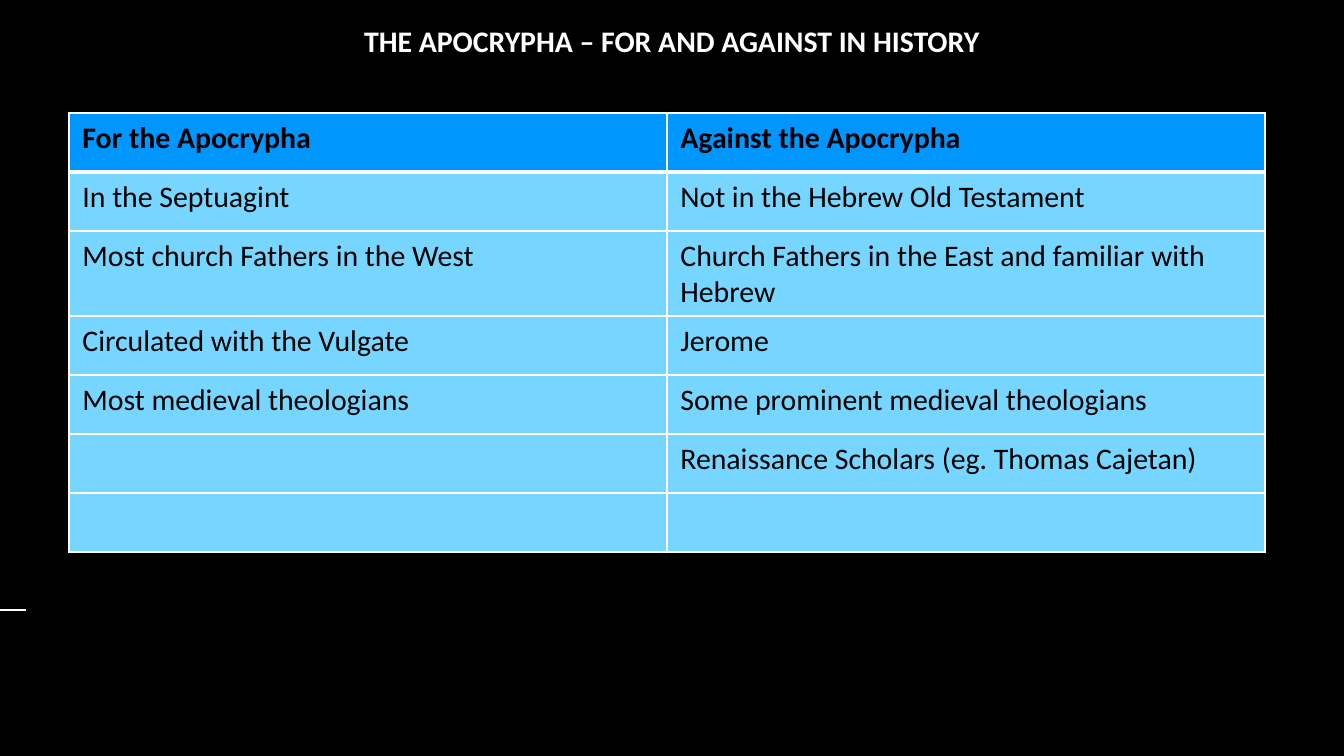
from lxml import etree
from pptx import Presentation
from pptx.dml.color import RGBColor
from pptx.enum.shapes import MSO_CONNECTOR
from pptx.enum.text import PP_ALIGN
from pptx.oxml.ns import qn
from pptx.util import Emu, Pt

STRAIGHT = MSO_CONNECTOR.STRAIGHT
CENTER = PP_ALIGN.CENTER
PX = 914400 / 134.4
WHITE, BLACK = "FFFFFF", "000000"
HEADER_BLUE, BODY_BLUE = "0096FF", "76D6FF"


def px(length):
    return Emu(round(length * PX))


def write(paragraph, text, color, bold):
    run = paragraph.add_run()
    run.text = text
    run.font.color.rgb = RGBColor.from_string(color)
    for key, value in {"name": "Calibri", "size": Pt(16), "bold": bold}.items():
        setattr(run.font, key, value)


prs = Presentation()
prs.slide_width, prs.slide_height = px(1344), px(756)
slide = prs.slides.add_slide(prs.slide_layouts[6])
slide.background.fill.solid()
slide.background.fill.fore_color.rgb = RGBColor.from_string(BLACK)

# Short rule at the left edge
edge_rule = slide.shapes.add_connector(STRAIGHT, px(0), px(610), px(26), px(610))
edge_rule.line.color.rgb = RGBColor.from_string(WHITE)
edge_rule.line.width = Pt(0.75)
etree.SubElement(edge_rule._element.spPr, qn("a:effectLst"))

# Title
title = slide.shapes.add_textbox(px(338), px(16), px(668), px(46)).text_frame
title.word_wrap = True
title.paragraphs[0].alignment = CENTER
write(title.paragraphs[0], "THE APOCRYPHA – FOR AND AGAINST IN HISTORY", WHITE, True)

# Arguments for and against
arguments = [
    ("For the Apocrypha", "Against the Apocrypha"),
    ("In the Septuagint", "Not in the Hebrew Old Testament"),
    ("Most church Fathers in the West",
     "Church Fathers in the East and familiar with Hebrew"),
    ("Circulated with the Vulgate", "Jerome"),
    ("Most medieval theologians", "Some prominent medieval theologians"),
    ("", "Renaissance Scholars (eg. Thomas Cajetan)"),
    ("", ""),
]
table = slide.shapes.add_table(
    len(arguments), 2, px(69), px(113), px(1196), px(440)).table
for column in table.columns:
    column.width = px(598)

for r, pair in enumerate(arguments):
    table.rows[r].height = px(59)
    for c, text in enumerate(pair):
        cell = table.cell(r, c)
        widths = {"L": 1, "R": 1, "T": 3 if r == 1 else 1, "B": 3 if r == 0 else 1}
        for side, points in widths.items():
            border = etree.SubElement(
                cell._tc.get_or_add_tcPr(), qn(f"a:ln{side}"), w=str(Pt(points)))
            solid = etree.SubElement(border, qn("a:solidFill"))
            etree.SubElement(solid, qn("a:srgbClr"), val=WHITE)
        cell.fill.solid()
        cell.fill.fore_color.rgb = RGBColor.from_string(
            HEADER_BLUE if r == 0 else BODY_BLUE)
        if text:
            write(cell.text_frame.paragraphs[0], text, BLACK, r == 0)

prs.save("out.pptx")
